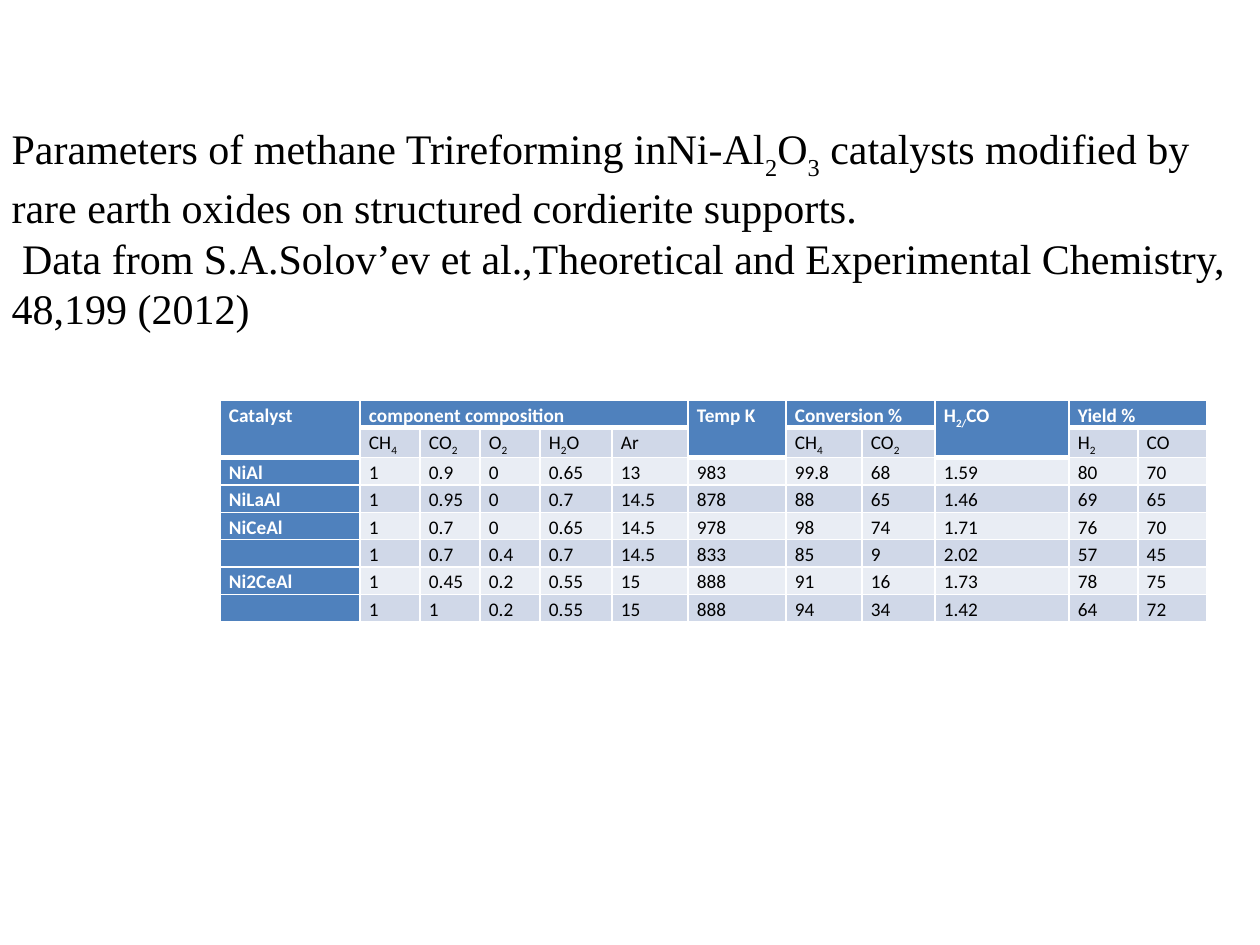
from dataclasses import dataclass

from lxml import etree
from pptx import Presentation
from pptx.dml.color import RGBColor
from pptx.enum.text import MSO_ANCHOR, MSO_AUTO_SIZE, PP_ALIGN
from pptx.oxml.ns import qn
from pptx.util import Emu, Pt

TOP = MSO_ANCHOR.TOP
LEFT = PP_ALIGN.LEFT
FIXED = MSO_AUTO_SIZE.NONE
SCALE = 914400 // 126


@dataclass(frozen=True)
class Theme:
    head: str = "4F81BD"
    bands: tuple = ("E9EDF4", "D0D8E8")
    white: str = "FFFFFF"
    black: str = "000000"
    serif: str = "Times New Roman"
    sans: str = "Calibri"
    title: int = 24
    body: int = 11
    thin: int = 1
    thick: int = 3


THEME = Theme()

TITLE = [
    "Parameters of methane Trireforming inNi-Al_2_O_3_ catalysts modified by "
    "rare earth oxides on structured cordierite supports.",
    " Data from S.A.Solov’ev et al.,Theoretical and Experimental Chemistry, "
    "48,199 (2012)",
]
COLS = [140, 60, 60, 60, 72, 76, 98, 76, 73, 134, 69, 69]
ROWS = [27, 30] + [26] * 6
SPANS = [(0, 0, 1, 0), (0, 1, 0, 5), (0, 6, 1, 6), (0, 7, 0, 8),
         (0, 9, 1, 9), (0, 10, 0, 11)]
DATA = [
    ["Catalyst", "component composition", "", "", "", "", "Temp K",
     "Conversion %", "", "H_2/_CO", "Yield %", ""],
    ["", "CH_4", "CO_2", "O_2", "H_2_O", "Ar", "", "CH_4", "CO_2", "", "H_2", "CO"],
    ["NiAl", "1", "0.9", "0", "0.65", "13", "983", "99.8", "68", "1.59", "80", "70"],
    ["NiLaAl", "1", "0.95", "0", "0.7", "14.5", "878", "88", "65", "1.46", "69", "65"],
    ["NiCeAl", "1", "0.7", "0", "0.65", "14.5", "978", "98", "74", "1.71", "76", "70"],
    ["", "1", "0.7", "0.4", "0.7", "14.5", "833", "85", "9", "2.02", "57", "45"],
    ["Ni2CeAl", "1", "0.45", "0.2", "0.55", "15", "888", "91", "16", "1.73", "78", "75"],
    ["", "1", "1", "0.2", "0.55", "15", "888", "94", "34", "1.42", "64", "72"],
]


def px(n):
    return Emu(n * SCALE)


def write(para, text, face, size, color, bold=False, drop=-25):
    for i, part in enumerate(text.split("_")):
        if not part:
            continue
        run = para.add_run()
        run.text = part
        font = run.font
        font.name, font.size, font.bold = face, Pt(size), bold
        font.color.rgb = RGBColor.from_string(color)
        if i % 2:
            font._element.set("baseline", str(drop * 1000))


def add_title(slide):
    title = slide.shapes.title
    title.left, title.top, title.width, title.height = map(px, (-1, 116, 1260, 254))
    frame = title.text_frame
    frame.word_wrap = True
    frame.auto_size = FIXED
    frame.vertical_anchor = TOP
    for i, text in enumerate(TITLE):
        para = frame.add_paragraph() if i else frame.paragraphs[0]
        para.alignment = LEFT
        write(para, text, THEME.serif, THEME.title, THEME.black, drop=-30)


def add_edge(cell, side, width):
    props = cell._tc.get_or_add_tcPr()
    line = etree.SubElement(props, qn("a:ln" + side), w=str(Pt(width)))
    fill = etree.SubElement(line, qn("a:solidFill"))
    etree.SubElement(fill, qn("a:srgbClr"), val=THEME.white)


def fill_cell(cell, text, row, col):
    head = row == 0 or col == 0
    cell.margin_left = cell.margin_right = px(9)
    cell.margin_top = cell.margin_bottom = 0
    cell.vertical_anchor = TOP
    if col == 0:
        add_edge(cell, "L", THEME.thin)
    add_edge(cell, "R", THEME.thin)
    if row == 0:
        add_edge(cell, "T", THEME.thin)
    add_edge(cell, "B", THEME.thin if row else THEME.thick)
    cell.fill.solid()
    cell.fill.fore_color.rgb = RGBColor.from_string(
        THEME.head if head else THEME.bands[row % 2])
    para = cell.text_frame.paragraphs[0]
    para.line_spacing = 1.15
    if text:
        write(para, text, THEME.sans, THEME.body,
              THEME.white if head else THEME.black, head)
    else:
        end = etree.SubElement(para._p, qn("a:endParaRPr"))
        end.set("sz", str(THEME.body * 100))


def add_grid(slide):
    frame = slide.shapes.add_table(
        len(ROWS), len(COLS), px(220), px(400), px(sum(COLS)), px(sum(ROWS)))
    table = frame.table
    for col, width in zip(table.columns, COLS):
        col.width = px(width)
    for row, height in zip(table.rows, ROWS):
        row.height = px(height)
    for r, line in enumerate(DATA):
        for c, text in enumerate(line):
            fill_cell(table.cell(r, c), text, r, c)
    for r, c, low, last in SPANS:
        table.cell(r, c).merge(table.cell(low, last))


def main():
    deck = Presentation()
    deck.slide_width, deck.slide_height = px(1260), px(945)
    slide = deck.slides.add_slide(deck.slide_layouts[5])
    add_title(slide)
    add_grid(slide)
    deck.save("out.pptx")


if __name__ == "__main__":
    main()
